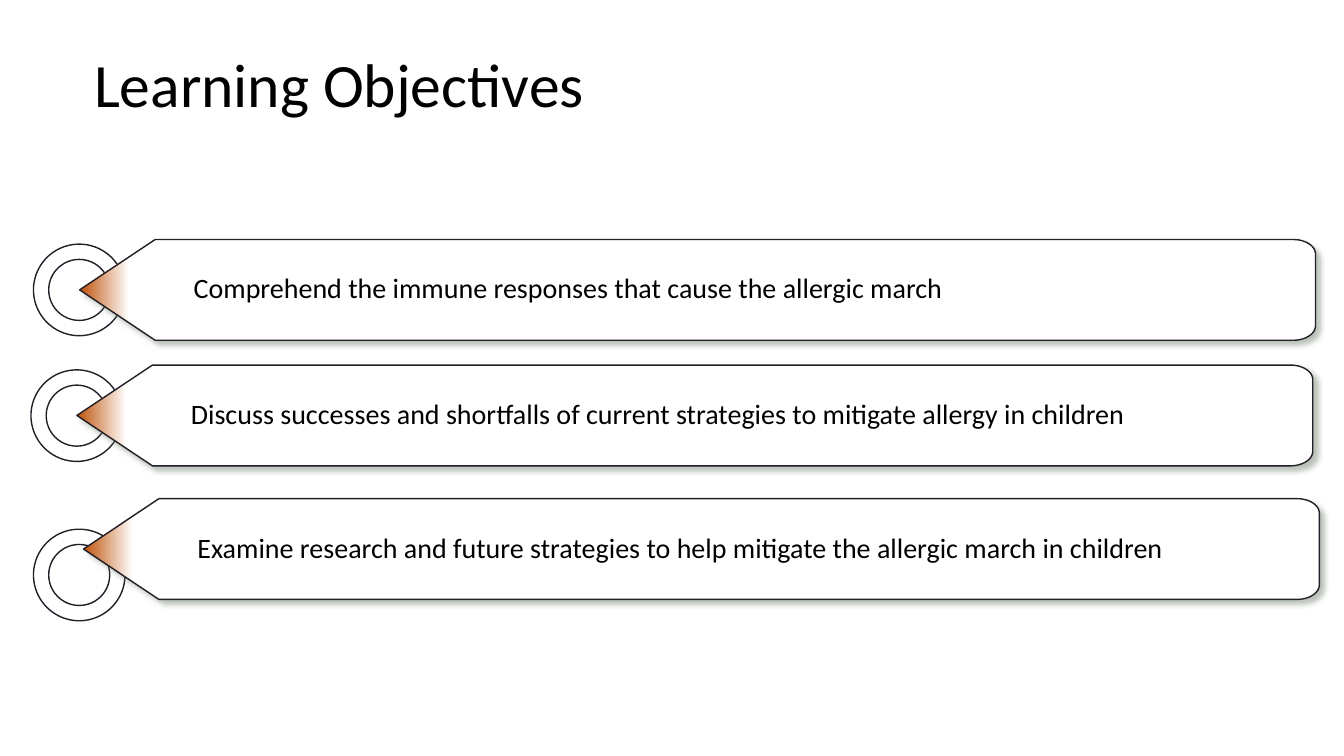
import math

from lxml import etree
from pptx import Presentation
from pptx import util as u
from pptx.dml.color import RGBColor
from pptx.enum import shapes, text
from pptx.oxml import ns

COLORS = {
    "text": "000000",
    "outline": "221F28",
    "white": "FFFFFF",
    "tip": "BE5108",
    "shadow": "758572",
}

OBJECTIVES = [
    ("Comprehend the immune responses that cause the allergic march",
     (23.9, 174.4), (56.9, 171.1)),
    ("Discuss successes and shortfalls of current strategies to mitigate allergy in children",
     (22.1, 264.2), (54.9, 260.8)),
    ("Examine research and future strategies to help mitigate the allergic march in children",
     (23.9, 378), (59.6, 356.2)),
]


def rgb(name):
    """Return the named colour."""
    return RGBColor.from_string(COLORS[name])


def add_element(parent, tag, **attributes):
    """Append a DrawingML element with the given attributes."""
    element = etree.SubElement(parent, ns.qn(tag))
    for name, value in attributes.items():
        element.set(name, str(value))
    return element


class ObjectivesSlide:
    """Holds the style and the current slide."""

    font = "Calibri"
    ring_size, ring_band = 65.4, 10.9
    banner_width, banner_height, tip_width = 882.8, 72, 54
    corner_width, corner_height, corner_steps = 16, 10.4, 12

    def __init__(self, presentation):
        """Add a slide that has only a title placeholder."""
        self.slide = presentation.slides.add_slide(presentation.slide_layouts[5])

    def set_words(self, text_frame, words, size):
        """Set one left-aligned, vertically centred paragraph."""
        text_frame.text = words
        text_frame.word_wrap = True
        text_frame.auto_size = text.MSO_AUTO_SIZE.NONE
        text_frame.vertical_anchor = text.MSO_ANCHOR.MIDDLE
        paragraph = text_frame.paragraphs[0]
        paragraph.alignment = text.PP_ALIGN.LEFT
        paragraph.line_spacing = 0.9
        for run in paragraph.runs:
            run.font.name = self.font
            run.font.size = u.Pt(size)
            run.font.color.rgb = rgb("text")

    def title(self, words, left, top, width, height):
        """Place and fill the title placeholder."""
        title = self.slide.shapes.title
        title.left, title.top = u.Pt(left), u.Pt(top)
        title.width, title.height = u.Pt(width), u.Pt(height)
        self.set_words(title.text_frame, words, 44)

    def outline(self, shape):
        """Give a shape the thin dark line and no inherited shadow."""
        shape.line.color.rgb = rgb("outline")
        shape.line.width = u.Pt(1)
        shape.shadow.inherit = False

    def ring(self, group, left, top):
        """Draw a half-transparent white ring."""
        ring = group.shapes.add_shape(
            shapes.MSO_SHAPE.DONUT, u.Pt(left), u.Pt(top),
            u.Pt(self.ring_size), u.Pt(self.ring_size))
        ring.adjustments[0] = self.ring_band / self.ring_size
        ring.fill.solid()
        ring.fill.fore_color.rgb = rgb("white")
        color = ring._element.spPr.find(".//" + ns.qn("a:srgbClr"))
        add_element(color, "a:alpha", val=50000)
        self.outline(ring)

    def corner(self, center_x, center_y, start):
        """Return the points of a quarter ellipse, clockwise from a start angle."""
        angles = [math.radians(start + 90 * step / self.corner_steps)
                  for step in range(self.corner_steps + 1)]
        return [(u.Pt(center_x + self.corner_width * math.cos(angle)),
                 u.Pt(center_y + self.corner_height * math.sin(angle)))
                for angle in angles]

    def banner(self, group, words, left, top):
        """Draw a pointed banner with rounded right corners and its text."""
        right, bottom = left + self.banner_width, top + self.banner_height
        shoulder, center_x = left + self.tip_width, right - self.corner_width
        points = [(u.Pt(shoulder), u.Pt(top))]
        points += self.corner(center_x, top + self.corner_height, -90)
        points += self.corner(center_x, bottom - self.corner_height, 0)
        points.append((u.Pt(shoulder), u.Pt(bottom)))
        builder = group.shapes.build_freeform(
            u.Pt(left), u.Pt(top + self.banner_height / 2))
        builder.add_line_segments(points, close=True)
        banner = builder.convert_to_shape()
        banner.fill.gradient()
        banner.fill.gradient_angle = 0
        for stop, color, position in zip(
                banner.fill.gradient_stops, ("tip", "white"), (0, 0.04)):
            stop.color.rgb = rgb(color)
            stop.position = position
        self.outline(banner)
        self.drop_shadow(banner)
        frame = banner.text_frame
        frame.margin_left, frame.margin_right = u.Pt(81.4), u.Pt(10)
        frame.margin_top = frame.margin_bottom = u.Pt(5)
        self.set_words(frame, words, 20)

    def drop_shadow(self, shape):
        """Add a soft shadow towards the lower right."""
        effects = shape._element.spPr.find(ns.qn("a:effectLst"))
        shadow = add_element(effects, "a:outerShdw", blurRad=u.Pt(4),
                             dist=u.Pt(3), dir=45 * 60000, algn="tl", rotWithShape=0)
        color = add_element(shadow, "a:srgbClr", val=COLORS["shadow"])
        add_element(color, "a:alpha", val=50000)

    def objective(self, words, ring_place, banner_place):
        """Group a ring with the banner that points at it."""
        group = self.slide.shapes.add_group_shape()
        self.ring(group, *ring_place)
        self.banner(group, words, *banner_place)


def main():
    """Build and save the slide."""
    presentation = Presentation()
    presentation.slide_width, presentation.slide_height = u.Pt(960), u.Pt(540)
    slide = ObjectivesSlide(presentation)
    slide.title("Learning Objectives", 60, 23, 842, 79)
    for objective in OBJECTIVES:
        slide.objective(*objective)
    presentation.save("out.pptx")


if __name__ == "__main__":
    main()
